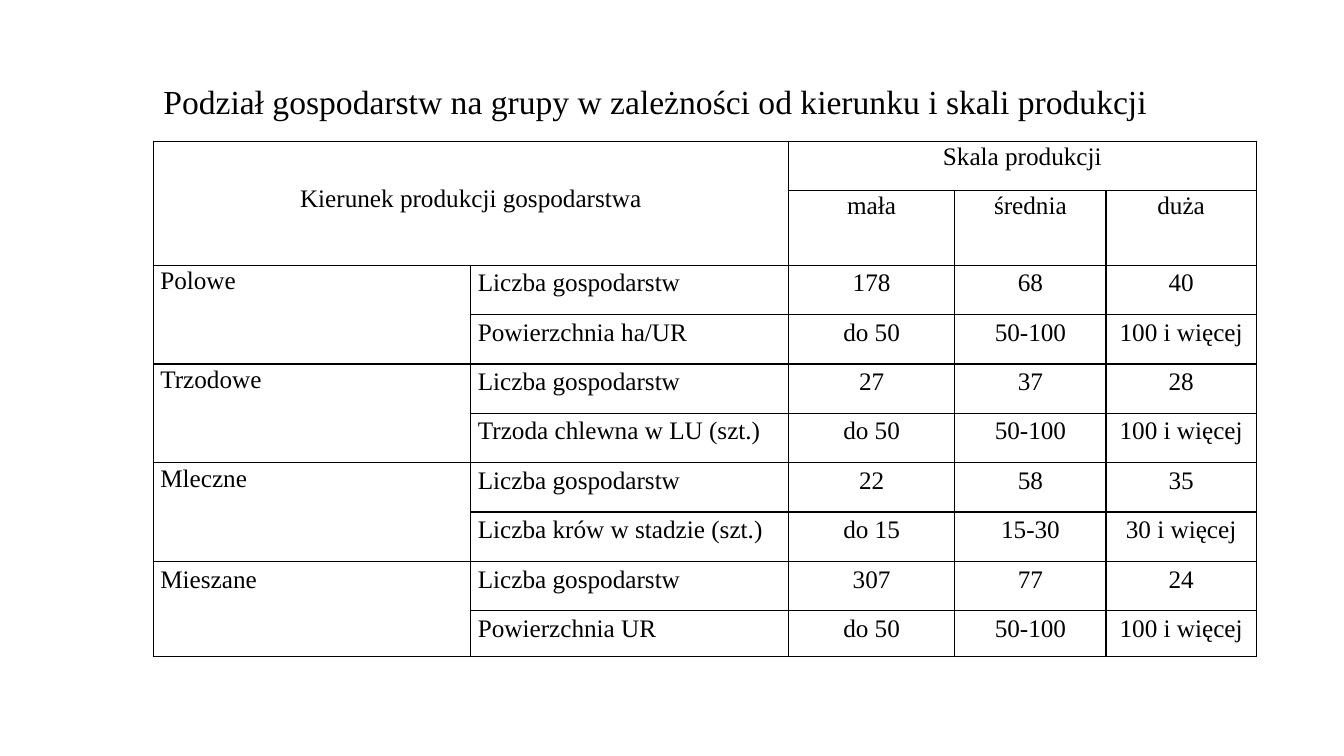
"""Build a slide with a table of farm groups by direction and scale of production."""
from dataclasses import dataclass

from lxml.etree import SubElement
from pptx import Presentation
from pptx.dml.color import RGBColor
from pptx.enum.text import MSO_ANCHOR, MSO_AUTO_SIZE, PP_ALIGN
from pptx.oxml.ns import qn
from pptx.util import Inches, Pt


@dataclass(frozen=True)
class Theme:
    """Colours, font and type sizes of the slide."""
    font: str = "Times New Roman"
    ink: str = "000000"
    title: int = 24
    body: int = 18
    after: int = 8
    tight: float = 1.07
    loose: float = 1.15
    rule: int = 1


TITLE = "Podział gospodarstw na grupy w zależności od kierunku i skali produkcji"
COUNT = "Liczba gospodarstw"
SCALES = ("mała", "średnia", "duża")
AREA = ("do 50", "50-100", "100 i więcej")
FARMS = (
    ("Polowe", (178, 68, 40), "Powierzchnia ha/UR", AREA),
    ("Trzodowe", (27, 37, 28), "Trzoda chlewna w LU (szt.)", AREA),
    ("Mleczne", (22, 58, 35), "Liczba krów w stadzie (szt.)",
     ("do 15", "15-30", "30 i więcej")),
    ("Mieszane", (307, 77, 24), "Powierzchnia UR", AREA),
)
WIDTHS = (3.15, 3.15, 1.65, 1.5, 1.49)
HEIGHTS = (0.49, 0.61, *[0.49] * 7, 0.45)


class Deck:
    """Holds the theme and the current slide."""

    def __init__(self, theme):
        """Open a blank wide presentation with one titled slide."""
        self.theme = theme
        self.show = Presentation()
        self.show.slide_width = Inches(13.33)
        self.show.slide_height = Inches(7.5)
        self.slide = self.show.slides.add_slide(self.show.slide_layouts[5])

    def label(self, frame, text, size, align=PP_ALIGN.LEFT, lead=None):
        """Put one styled run into a text frame."""
        para = frame.paragraphs[0]
        para.alignment = align
        para.line_spacing = lead or self.theme.tight
        para.space_before = Pt(0)
        para.space_after = Pt(self.theme.after)
        run = para.add_run()
        run.text = text
        run.font.name = self.theme.font
        run.font.size = Pt(size)
        run.font.color.rgb = RGBColor.from_string(self.theme.ink)

    def title(self, text, left, top, width, height):
        """Place and fill the title."""
        head = self.slide.shapes.title
        head.left, head.top = Inches(left), Inches(top)
        head.width, head.height = Inches(width), Inches(height)
        frame = head.text_frame
        frame.word_wrap = True
        frame.auto_size = MSO_AUTO_SIZE.SHAPE_TO_FIT_TEXT
        frame.vertical_anchor = MSO_ANCHOR.TOP
        self.label(frame, text, self.theme.title)

    def grid(self, left, top, widths, heights):
        """Add a plain ruled table."""
        table = self.slide.shapes.add_table(
            len(heights), len(widths), Inches(left), Inches(top),
            Inches(sum(widths)), Inches(sum(heights))).table
        table.first_row = table.horz_banding = False
        for col, width in zip(table.columns, widths):
            col.width = Inches(width)
        for row, height in zip(table.rows, heights):
            row.height = Inches(height)
        for cell in table.iter_cells():
            cell.margin_left = cell.margin_right = Inches(0.07)
            cell.margin_top = cell.margin_bottom = Inches(0)
            self.frame(cell)
            cell.fill.background()
        return table

    def frame(self, cell):
        """Rule all four sides of a cell."""
        props = cell._tc.get_or_add_tcPr()
        for side in ("a:lnL", "a:lnR", "a:lnT", "a:lnB"):
            line = SubElement(props, qn(side), w=str(Pt(self.theme.rule)))
            fill = SubElement(line, qn("a:solidFill"))
            SubElement(fill, qn("a:srgbClr"), val=self.theme.ink)

    def cell(self, cell, text, align=PP_ALIGN.LEFT, lead=None):
        """Fill one table cell."""
        self.label(cell.text_frame, str(text), self.theme.body, align, lead)


def main():
    """Build and save the slide."""
    theme = Theme()
    deck = Deck(theme)
    mid = PP_ALIGN.CENTER
    table = deck.grid(1.52, 1.4, WIDTHS, HEIGHTS)
    deck.title(TITLE, 1.52, 0.72, 10.8, 0.51)

    kind = table.cell(0, 0)
    kind.merge(table.cell(1, 1))
    kind.margin_top = Inches(0.42)
    deck.cell(kind, "Kierunek produkcji gospodarstwa", mid)
    scale = table.cell(0, 2)
    scale.merge(table.cell(0, 4))
    deck.cell(scale, "Skala produkcji", mid)
    for col, name in enumerate(SCALES, 2):
        deck.cell(table.cell(1, col), name, mid)

    for item, (farm, counts, label, limits) in enumerate(FARMS):
        top = 2 + 2 * item
        group = table.cell(top, 0)
        group.merge(table.cell(top + 1, 0))
        last = item == len(FARMS) - 1
        deck.cell(group, farm, lead=theme.loose if last else theme.tight)
        for row, (name, values) in enumerate(((COUNT, counts), (label, limits)), top):
            deck.cell(table.cell(row, 1), name, lead=theme.loose)
            for col, value in enumerate(values, 2):
                deck.cell(table.cell(row, col), value, mid, theme.loose)

    deck.show.save("out.pptx")


if __name__ == "__main__":
    main()
